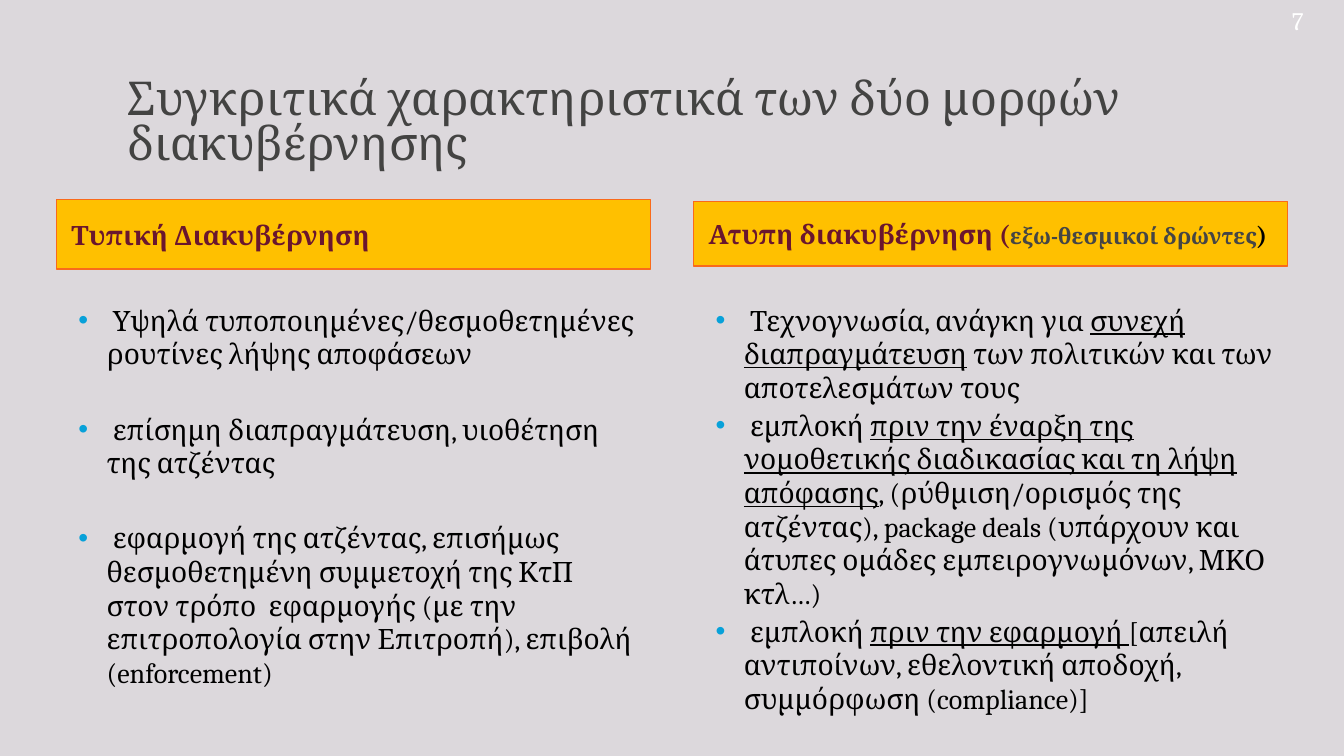
from dataclasses import dataclass
from typing import Any

from lxml.etree import SubElement
from pptx import Presentation
from pptx.dml.color import RGBColor as RGB
from pptx.enum.shapes import MSO_SHAPE as Shape
from pptx.enum.text import MSO_ANCHOR as Anchor, PP_ALIGN as Align
from pptx.oxml.ns import qn
from pptx.util import Emu, Inches, Pt


@dataclass(frozen=True)
class Theme:
    font: str = "Cambria"
    background: str = "DCD8DC"
    title: str = "434342"
    band: str = "FFC000"
    band_line: str = "F96A1B"
    heading: str = "6A162E"
    note: str = "454545"
    text: str = "000000"
    bullet: str = "08A1D9"
    number: str = "FFFFFF"
    title_size: float = 33.3
    heading_size: float = 19
    note_size: float = 16
    number_size: float = 18
    body_size: float = 20


@dataclass(frozen=True)
class Box:
    """Position and size in percent of the slide's width and height."""
    left: float
    top: float
    width: float
    height: float


@dataclass(frozen=True)
class Run:
    text: str
    size: float
    color: str
    bold: bool = False
    underline: bool = False


@dataclass(frozen=True)
class Column:
    left: float
    band_top: float
    band_height: float
    heading: list[Run]
    points: list[list[Run]]
    gap: float  # points of space between list items


T = Theme()
COLUMN_WIDTH = 44.19
BODY_TOP, BODY_HEIGHT = 39.47, 56.67
SPACE_BEFORE = 3


def head(text: str, size: float = T.heading_size, color: str = T.heading) -> Run:
    return Run(text, size, color, bold=True)


def body(text: str, underline: bool = False) -> Run:
    return Run(text, T.body_size, T.text, underline=underline)


COLUMNS = [
    Column(4.2, 26.4, 9.2, [head("Τυπική Διακυβέρνηση")], [
        [body(" Υψηλά τυποποιημένες/θεσμοθετημένες ρουτίνες λήψης αποφάσεων")],
        [body(" επίσημη διαπραγμάτευση, υιοθέτηση της ατζέντας")],
        [body(" εφαρμογή της ατζέντας, επισήμως θεσμοθετημένη συμμετοχή της ΚτΠ "
              "στον τρόπο  εφαρμογής (με την επιτροπολογία στην Επιτροπή), "
              "επιβολή (enforcement)")],
    ], gap=29.7),
    Column(51.61, 26.67, 8.53, [
        head("Ατυπη διακυβέρνηση ("),
        head("εξω-θεσμικοί δρώντες", T.note_size, T.note),
        head(")", T.number_size, T.text),
    ], [
        [body(" Τεχνογνωσία, ανάγκη για "),
         body("συνεχή διαπραγμάτευση", True),
         body(" των πολιτικών και των αποτελεσμάτων τους")],
        [body(" εμπλοκή "),
         body("πριν την έναρξη της νομοθετικής διαδικασίας και τη λήψη απόφασης", True),
         body(", (ρύθμιση/ορισμός της ατζέντας), package deals (υπάρχουν και "
              "άτυπες ομάδες εμπειρογνωμόνων, ΜΚΟ κτλ…)")],
        [body(" εμπλοκή "),
         body("πριν την εφαρμογή ", True),
         body("[απειλή αντιποίνων, εθελοντική αποδοχή, συμμόρφωση (compliance)]")],
    ], gap=SPACE_BEFORE),
]

prs = Presentation()
prs.slide_width, prs.slide_height = Inches(13.33), Inches(7.5)
slide = prs.slides.add_slide(prs.slide_layouts[6])


def apply(target: Any, formats: dict[str, Any]) -> None:
    for name, value in formats.items():
        setattr(target, name, value)


def place(box: Box) -> tuple[Emu, Emu, Emu, Emu]:
    w, h = prs.slide_width / 100, prs.slide_height / 100
    return (Emu(round(box.left * w)), Emu(round(box.top * h)),
            Emu(round(box.width * w)), Emu(round(box.height * h)))


def indent(p: Any, left: float, first: float = 0) -> None:
    pPr = p._p.get_or_add_pPr()
    pPr.set("marL", str(Inches(left)))
    pPr.set("indent", str(Inches(first)))


def add_bullet(p: Any) -> None:
    indent(p, 0.4, -0.28)
    pPr = p._p.get_or_add_pPr()
    color = SubElement(pPr, qn("a:buClr"))
    SubElement(color, qn("a:srgbClr"), val=T.bullet)
    SubElement(pPr, qn("a:buFont"), typeface="Arial")
    SubElement(pPr, qn("a:buChar"), char="•")


def write(p: Any, runs: list[Run], formats: dict[str, Any]) -> None:
    apply(p, formats)
    for run in runs:
        r = p.add_run()
        r.text = run.text
        apply(r.font, {"name": T.font, "size": Pt(run.size),
                       "bold": run.bold, "underline": run.underline})
        r.font.color.rgb = RGB.from_string(run.color)


def add_text(box: Box, anchor: Anchor) -> Any:
    tf = slide.shapes.add_textbox(*place(box)).text_frame
    apply(tf, {"word_wrap": True, "vertical_anchor": anchor})
    return tf


def add_band(col: Column) -> None:
    box = Box(col.left, col.band_top, COLUMN_WIDTH, col.band_height)
    sp = slide.shapes.add_shape(Shape.RECTANGLE, *place(box))
    sp.shadow.inherit = False
    sp.fill.solid()
    sp.fill.fore_color.rgb = RGB.from_string(T.band)
    sp.line.color.rgb = RGB.from_string(T.band_line)
    sp.line.width = Pt(1)
    tf = sp.text_frame
    apply(tf, {"word_wrap": True, "vertical_anchor": Anchor.MIDDLE})
    p = tf.paragraphs[0]
    write(p, col.heading, {"alignment": Align.LEFT, "space_before": Pt(SPACE_BEFORE)})
    indent(p, 0.05)


def add_points(col: Column) -> None:
    tf = add_text(Box(col.left, BODY_TOP, COLUMN_WIDTH, BODY_HEIGHT), Anchor.TOP)
    for i, runs in enumerate(col.points):
        p = tf.add_paragraph() if i else tf.paragraphs[0]
        write(p, runs, {"space_before": Pt(col.gap if i else SPACE_BEFORE)})
        add_bullet(p)


# Background
slide.background.fill.solid()
slide.background.fill.fore_color.rgb = RGB.from_string(T.background)

# Title
title = add_text(Box(8.78, 9.6, 82.52, 13.87), Anchor.MIDDLE)
write(title.paragraphs[0],
      [Run("Συγκριτικά χαρακτηριστικά των δύο μορφών διακυβέρνησης",
           T.title_size, T.title)], {"line_spacing": 0.8})

# Two compared columns
for column in COLUMNS:
    add_band(column)
    add_points(column)

# Slide number
number = add_text(Box(89.42, 0, 8.33, 5.33), Anchor.BOTTOM)
write(number.paragraphs[0], [Run("7", T.number_size, T.number)],
      {"alignment": Align.RIGHT})

prs.save("out.pptx")
